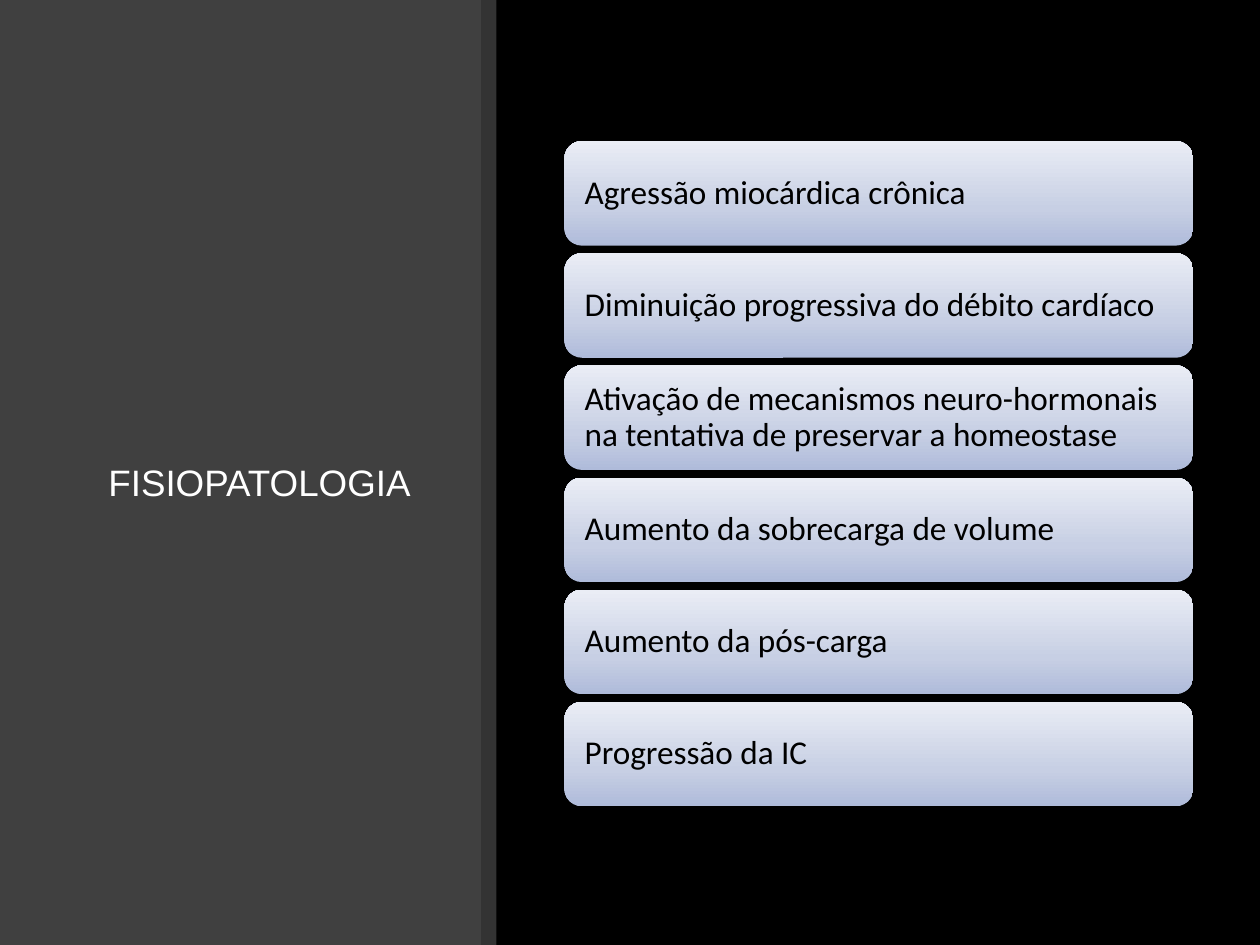
from copy import deepcopy
from dataclasses import dataclass

from lxml.etree import SubElement
from pptx import Presentation
from pptx.dml.color import RGBColor
from pptx.enum.shapes import MSO_SHAPE
from pptx.enum.text import MSO_ANCHOR, PP_ALIGN
from pptx.oxml.ns import qn
from pptx.util import Inches, Pt


@dataclass(frozen=True)
class Theme:
    background: str = "000000"
    panel: str = "404040"
    light: str = "FFFFFF"
    dark: str = "000000"
    card_stops: tuple = ((0, "AFBBDA"), (0.35, "C7CFE4"), (1, "EAEDF5"))
    title_font: str = "Arial"
    title_size: int = 21
    card_font: str = "Calibri"
    card_size: int = 19


class SlideBuilder:
    """Draws the panels, title and cards of one slide in a shared theme."""

    def __init__(self, slide, theme):
        self.slide = slide
        self.theme = theme
        fill = slide.background.fill
        fill.solid()
        fill.fore_color.rgb = RGBColor.from_string(theme.background)

    def add_plain_shape(self, kind, box):
        shape = self.slide.shapes.add_shape(kind, *map(Inches, box))
        shape.shadow.inherit = False
        shape.line.fill.background()
        return shape

    def add_panel(self, box, color, opacity=100):
        shape = self.add_plain_shape(MSO_SHAPE.RECTANGLE, box)
        shape.fill.solid()
        shape.fill.fore_color.rgb = RGBColor.from_string(color)
        if opacity < 100:
            color_element = next(shape._element.spPr.iter(qn("a:srgbClr")))
            SubElement(color_element, qn("a:alpha"), val=str(opacity * 1000))

    def add_text(self, shape, text, font, size, color, alignment):
        frame = shape.text_frame
        frame.word_wrap = True
        frame.vertical_anchor = MSO_ANCHOR.MIDDLE
        paragraph = frame.paragraphs[0]
        paragraph.alignment = alignment
        paragraph.line_spacing = 0.9
        run = paragraph.add_run()
        run.text = text
        run.font.name = font
        run.font.size = Pt(size)
        run.font.color.rgb = RGBColor.from_string(color)

    def add_title(self, box, text):
        shape = self.slide.shapes.add_textbox(*map(Inches, box))
        theme = self.theme
        self.add_text(shape, text, theme.title_font, theme.title_size,
                      theme.light, PP_ALIGN.CENTER)

    def add_card(self, box, text):
        shape = self.add_plain_shape(MSO_SHAPE.ROUNDED_RECTANGLE, box)
        theme = self.theme
        shape.fill.gradient()
        shape.fill.gradient_angle = 90
        stop_list = next(shape._element.spPr.iter(qn("a:gsLst")))
        stop_list.append(deepcopy(stop_list[0]))
        for stop, (position, color) in zip(shape.fill.gradient_stops, theme.card_stops):
            stop.position = position
            stop.color.rgb = RGBColor.from_string(color)
        frame = shape.text_frame
        frame.margin_left = frame.margin_right = Inches(0.12)
        frame.margin_top = frame.margin_bottom = Inches(0.08)
        self.add_text(shape, text, theme.card_font, theme.card_size,
                      theme.dark, PP_ALIGN.LEFT)


STEPS = (
    "Agressão miocárdica crônica",
    "Diminuição progressiva do débito cardíaco",
    "Ativação de mecanismos neuro-hormonais na tentativa de preservar a homeostase",
    "Aumento da sobrecarga de volume",
    "Aumento da pós-carga",
    "Progressão da IC",
)


def main():
    presentation = Presentation()
    presentation.slide_width = Inches(10)
    presentation.slide_height = Inches(7.5)
    slide = presentation.slides.add_slide(presentation.slide_layouts[6])
    theme = Theme()
    builder = SlideBuilder(slide, theme)

    panel_width, strip_width, height = 3.82, 0.12, 7.5
    builder.add_panel((0, 0, panel_width, height), theme.panel)
    builder.add_title((0.69, 0.89, 2.74, 5.91), "FISIOPATOLOGIA")
    builder.add_panel((panel_width, 0, strip_width, height), theme.light, opacity=20)

    card_top, card_height, card_gap = 1.12, 0.83, 0.06
    for index, step in enumerate(STEPS):
        top = card_top + index * (card_height + card_gap)
        builder.add_card((4.48, top, 4.99, card_height), step)

    presentation.save("out.pptx")


if __name__ == "__main__":
    main()
